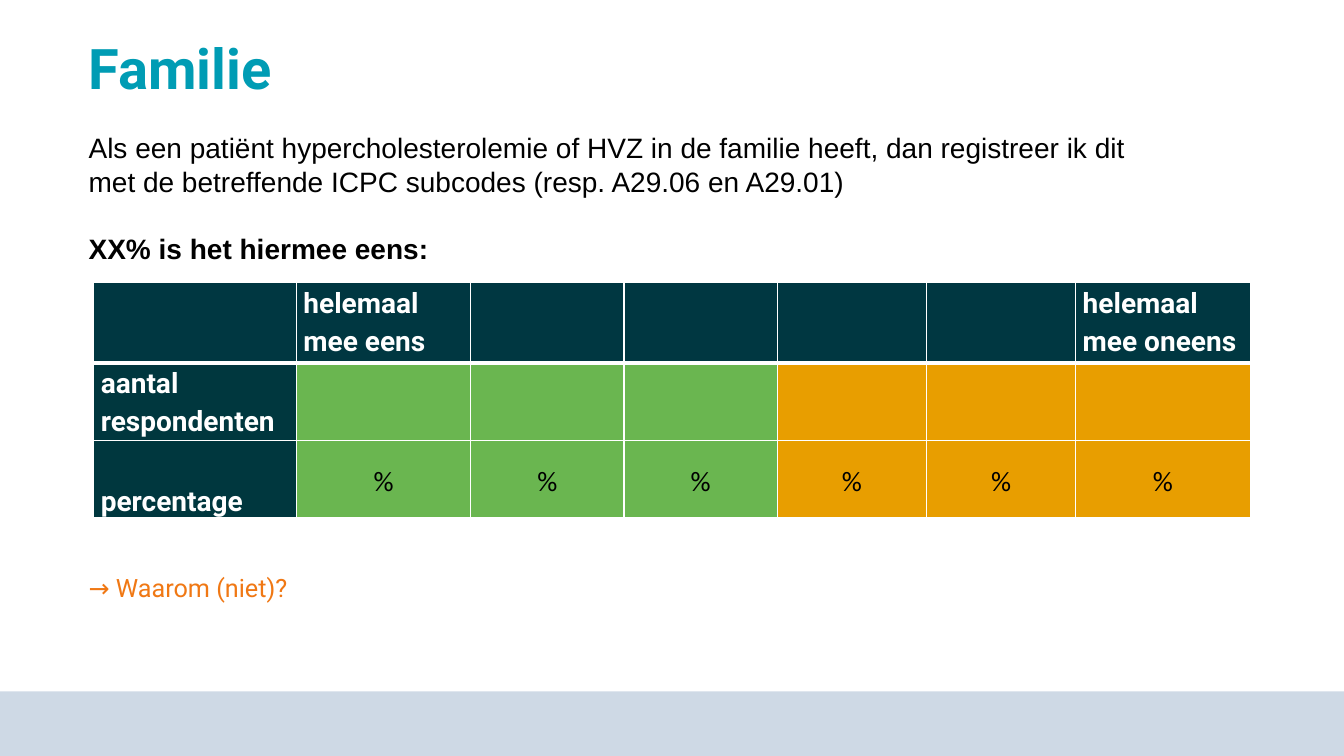
from lxml import etree
from pptx import Presentation
from pptx.dml.color import RGBColor
from pptx.enum import shapes, text
from pptx.oxml.ns import qn
from pptx.util import Inches, Pt


def paint(target, color):
    target.solid()
    target.fore_color.rgb = RGBColor.from_string(color)


def write(paragraph, words, size, font, color, bold=False):
    run = paragraph.add_run()
    run.text = words
    run.font.size = Pt(size)
    run.font.name = font
    run.font.bold = bold
    paint(run.font.fill, color)


WHITE, BLACK = "FFFFFF", "000000"
HEADER, LABEL, AGREE, DISAGREE = "003741", "00373E", "6AB650", "E89E00"

prs = Presentation()
prs.slide_width, prs.slide_height = Inches(13.33), Inches(7.5)
slide = prs.slides.add_slide(prs.slide_layouts[6])

footer = slide.shapes.add_shape(
    shapes.MSO_SHAPE.RECTANGLE, Inches(0), Inches(6.86), Inches(13.33), Inches(0.64))
footer.shadow.inherit = False
paint(footer.fill, "CED9E5")
footer.line.fill.background()

statement = ("Als een patiënt hypercholesterolemie of HVZ in de familie heeft, dan registreer ik dit "
             "met de betreffende ICPC subcodes (resp. A29.06 en A29.01)")
passages = [
    (0.36, 10.68, 0.71, 0.9, [("Familie", 40, "Roboto", "009CB4", True)]),
    (1.25, 10.95, 1.45, 1.0, [(statement, 20, "Arial", BLACK, False),
                              ("XX% is het hiermee eens:", 20, "Arial", BLACK, True)]),
    (5.63, 6.54, 0.4, 1.0, [("→ Waarom (niet)?", 18, "Roboto", "F07814", False)]),
]
for top, width, height, spacing, lines in passages:
    frame = slide.shapes.add_textbox(
        Inches(0.78), Inches(top), Inches(width), Inches(height)).text_frame
    frame.word_wrap = True
    for i, line in enumerate(lines):
        paragraph = frame.add_paragraph() if i else frame.paragraphs[0]
        paragraph.line_spacing = spacing
        if i:
            paragraph.space_before = Pt(24)
        write(paragraph, *line)

col_widths = [2.01, 1.73, 1.52, 1.52, 1.48, 1.48, 1.73]
row_heights = [0.8, 0.77, 0.77]
answers = [
    ["", "helemaal mee eens", "", "", "", "", "helemaal mee oneens"],
    ["aantal\nrespondenten"] + [""] * 6,
    ["percentage"] + ["%"] * 6,
]
scores = slide.shapes.add_table(
    3, 7, Inches(0.93), Inches(2.8), Inches(sum(col_widths)), Inches(sum(row_heights))).table
for column, width in zip(scores.columns, col_widths):
    column.width = Inches(width)
for row, height in zip(scores.rows, row_heights):
    row.height = Inches(height)

for r, answer_row in enumerate(answers):
    for c, words in enumerate(answer_row):
        cell = scores.cell(r, c)
        cell.margin_left = cell.margin_right = Inches(0.07)
        cell.margin_top = cell.margin_bottom = 0
        properties = cell._tc.get_or_add_tcPr()
        for side in "LRTB":
            thick = (r, side) in [(0, "B"), (1, "T")]
            edge = etree.SubElement(properties, qn("a:ln" + side), w=str(Pt(3 if thick else 1)))
            edge_fill = etree.SubElement(edge, qn("a:solidFill"))
            etree.SubElement(edge_fill, qn("a:srgbClr"), val=WHITE)
        is_label = r == 0 or c == 0
        paint(cell.fill, HEADER if r == 0 else LABEL if c == 0 else AGREE if c < 4 else DISAGREE)
        if words == "%":
            cell.vertical_anchor = text.MSO_ANCHOR.MIDDLE
        elif words == "percentage":
            cell.vertical_anchor = text.MSO_ANCHOR.BOTTOM
        for i, line in enumerate(words.split("\n") if words else []):
            paragraph = cell.text_frame.add_paragraph() if i else cell.text_frame.paragraphs[0]
            paragraph.line_spacing = 1.15
            paragraph.alignment = text.PP_ALIGN.LEFT if is_label else text.PP_ALIGN.CENTER
            write(paragraph, line, 20, "Roboto" if is_label else "Calibri",
                  WHITE if is_label else BLACK, is_label)

prs.save("out.pptx")
